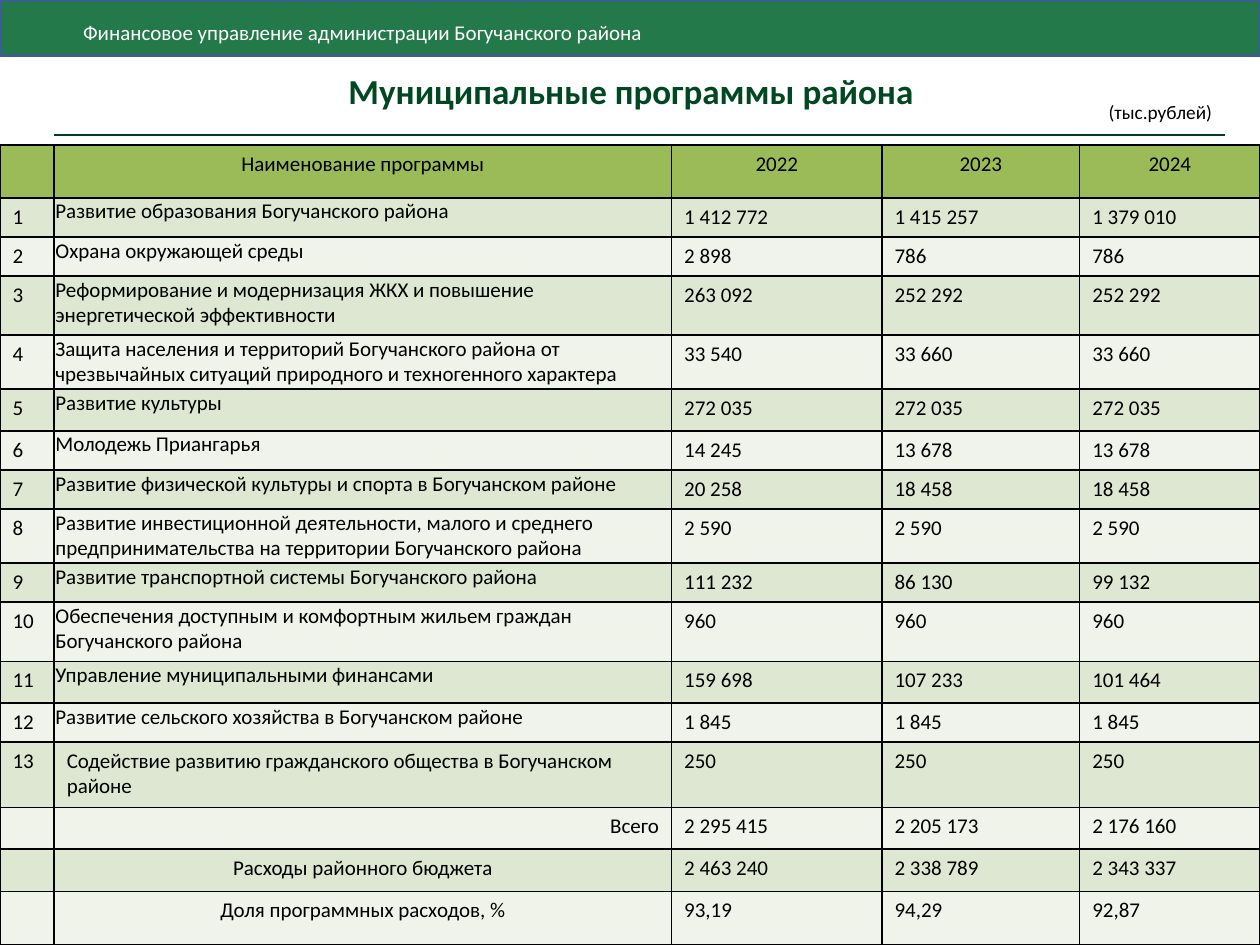
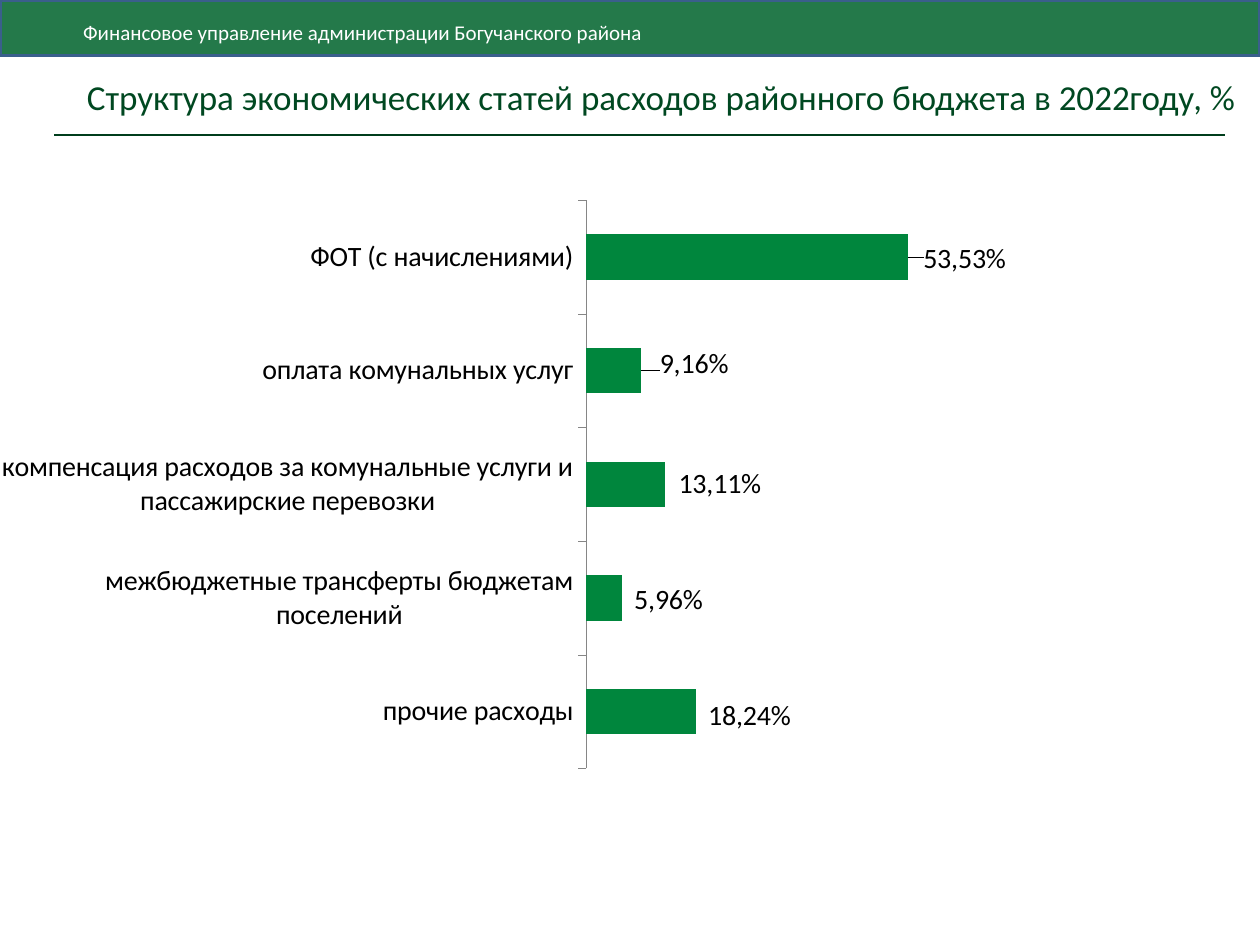
import lxml.etree
import pptx
import pptx.chart.data
import pptx.dml.color
import pptx.enum.chart
import pptx.enum.shapes
import pptx.enum.text
import pptx.oxml
import pptx.oxml.ns
import pptx.util

Inches = pptx.util.Inches
Pt = pptx.util.Pt
Align = pptx.enum.text.PP_ALIGN
Anchor = pptx.enum.text.MSO_ANCHOR
qn = pptx.oxml.ns.qn

FONT = "Calibri"
BLACK = "000000"
WHITE = "FFFFFF"
TITLE_GREEN = "004821"
BAND_GREEN = "00642D"
BAND_OUTLINE = "3A5F8C"
RULE_GREEN = "003E1C"
HEADER_FILL = "9BBB59"
ROW_FILLS = ["DEE7D1", "EFF3EA"]
BAR_GREEN = "00863D"
AXIS_GRAY = "868686"


def color(hex_value):
    return pptx.dml.color.RGBColor.from_string(hex_value)


def write(text_frame, text, size, hex_value=BLACK, align=Align.LEFT, bold=False):
    text_frame.text = text
    paragraph = text_frame.paragraphs[0]
    paragraph.alignment = align
    paragraph.font.size = Pt(size)
    for run in paragraph.runs:
        run.font.name = FONT
        run.font.size = Pt(size)
        run.font.bold = bold
        run.font.color.rgb = color(hex_value)


presentation = pptx.Presentation()
presentation.slide_width = Inches(10)
presentation.slide_height = Inches(7.5)

# Shared frame of both slides: band, rule and title
titles = [
    ("Муниципальные программы района", (0.51, 0.52, 9, 0.39), True),
    ("Структура экономических статей расходов районного бюджета в 2022году, %",
     (0.5, 0.3, 9.5, 0.93), False),
]
slides = []
for title, title_place, bold in titles:
    slide = presentation.slides.add_slide(presentation.slide_layouts[6])
    slides.append(slide)

    band = slide.shapes.add_shape(
        pptx.enum.shapes.MSO_SHAPE.RECTANGLE, 0, 0, Inches(10), Inches(0.44))
    band.shadow.inherit = False
    band.fill.solid()
    band.fill.fore_color.rgb = color(BAND_GREEN)
    fill_color = band.fill._xPr.find(qn("a:solidFill"))[0]
    lxml.etree.SubElement(fill_color, qn("a:alpha"), val="86000")
    band.line.color.rgb = color(BAND_OUTLINE)
    band.line.width = Pt(2)
    band.text_frame.margin_left = Inches(0.66)
    band.text_frame.margin_top = Inches(0.12)
    band.text_frame.vertical_anchor = Anchor.MIDDLE
    write(band.text_frame, "Финансовое управление администрации Богучанского района",
          12, WHITE)

    rule = slide.shapes.add_connector(
        pptx.enum.shapes.MSO_CONNECTOR.STRAIGHT,
        Inches(0.43), Inches(1.07), Inches(9.72), Inches(1.07))
    rule.line.color.rgb = color(RULE_GREEN)
    rule.line.width = Pt(1.25)
    lxml.etree.SubElement(rule._element.spPr, qn("a:effectLst"))

    title_box = slide.shapes.add_textbox(*map(Inches, title_place))
    title_box.text_frame.word_wrap = True
    title_box.text_frame.vertical_anchor = Anchor.MIDDLE
    write(title_box.text_frame, title, 20, TITLE_GREEN, Align.CENTER, bold)

programs_slide, structure_slide = slides

# Slide 1: table of programs, each row with its height
programs = [
    (0.42, "", "Наименование программы", "2022", "2023", "2024"),
    (0.31, "1", "Развитие образования Богучанского района",
     "1 412 772", "1 415 257", "1 379 010"),
    (0.31, "2", "Охрана окружающей среды", "2 898", "786", "786"),
    (0.47, "3", "Реформирование и модернизация ЖКХ и повышение энергетической эффективности",
     "263 092", "252 292", "252 292"),
    (0.43, "4", "Защита населения и территорий Богучанского района от чрезвычайных "
     "ситуаций природного и техногенного характера", "33 540", "33 660", "33 660"),
    (0.33, "5", "Развитие культуры", "272 035", "272 035", "272 035"),
    (0.31, "6", "Молодежь Приангарья", "14 245", "13 678", "13 678"),
    (0.31, "7", "Развитие физической культуры и спорта в Богучанском районе",
     "20 258", "18 458", "18 458"),
    (0.43, "8", "Развитие инвестиционной деятельности, малого и среднего "
     "предпринимательства на территории Богучанского района",
     "2 590", "2 590", "2 590"),
    (0.31, "9", "Развитие транспортной системы Богучанского района",
     "111 232", "86 130", "99 132"),
    (0.47, "10", "Обеспечения доступным и комфортным жильем граждан Богучанского района",
     "960", "960", "960"),
    (0.33, "11", "Управление муниципальными финансами",
     "159 698", "107 233", "101 464"),
    (0.31, "12", "Развитие сельского хозяйства в Богучанском районе",
     "1 845", "1 845", "1 845"),
    (0.52, "13", "Содействие развитию гражданского общества в Богучанском районе",
     "250", "250", "250"),
    (0.33, "", "Всего", "2 295 415", "2 205 173", "2 176 160"),
    (0.34, "", "Расходы районного бюджета", "2 463 240", "2 338 789", "2 343 337"),
    (0.42, "", "Доля программных расходов, %", "93,19", "94,29", "92,87"),
]
column_widths = [0.43, 4.9, 1.67, 1.57, 1.43]
name_alignments = {14: Align.RIGHT, 15: Align.CENTER, 16: Align.CENTER}

table = programs_slide.shapes.add_table(
    len(programs), len(column_widths), 0, Inches(1.15), Inches(10), Inches(6.35)).table
table.first_row = False
table.horz_banding = False
for column, width in zip(table.columns, column_widths):
    column.width = Inches(width)

for row_index, (height, *texts) in enumerate(programs):
    table.rows[row_index].height = Inches(height)
    for column_index, text in enumerate(texts):
        cell = table.cell(row_index, column_index)
        align = Align.LEFT
        if row_index == 0:
            align = Align.CENTER
        elif column_index == 1:
            align = name_alignments.get(row_index, Align.LEFT)
            if row_index <= 12:
                cell.margin_left = cell.margin_right = cell.margin_top = Inches(0.01)
                cell.margin_bottom = 0
        write(cell.text_frame, text, 12, align=align)

        cell_properties = cell._tc.get_or_add_tcPr()
        for side in ("lnL", "lnR", "lnT", "lnB"):
            border = lxml.etree.SubElement(
                cell_properties, qn("a:" + side), w=str(Pt(1)))
            border_fill = lxml.etree.SubElement(border, qn("a:solidFill"))
            lxml.etree.SubElement(border_fill, qn("a:srgbClr"), val=BLACK)
        cell.fill.solid()
        cell.fill.fore_color.rgb = color(
            ROW_FILLS[(row_index - 1) % 2] if row_index else HEADER_FILL)

# Unit of the table
unit_box = programs_slide.shapes.add_textbox(
    Inches(8.7), Inches(0.75), Inches(1.3), Inches(0.29))
unit_box.text_frame.word_wrap = True
write(unit_box.text_frame, "(тыс.рублей)", 11)

# Slide 2: bar chart of shares, each with the shift of its label in inches
CHART_WIDTH = 10
CHART_HEIGHT = 5.26
shares = [
    ("прочие расходы", 18.24, 0.06, 0.04),
    ("межбюджетные трансферты бюджетам поселений", 5.96, 0.06, 0.02),
    ("компенсация расходов за комунальные услуги и пассажирские перевозки",
     13.11, 0.07, 0),
    ("оплата комунальных услуг", 9.16, 0.11, -0.05),
    ("ФОТ (с начислениями)", 53.53, 0.08, 0.02),
]
chart_data = pptx.chart.data.CategoryChartData(number_format="0.00")
chart_data.categories = [share[0] for share in shares]
chart_data.add_series("Series 1", [share[1] for share in shares])
chart = structure_slide.shapes.add_chart(
    pptx.enum.chart.XL_CHART_TYPE.BAR_CLUSTERED, 0, Inches(1.47),
    Inches(CHART_WIDTH), Inches(CHART_HEIGHT), chart_data).chart
chart.has_legend = False
chart.has_title = False
chart.font.name = FONT
chart.font.size = Pt(18)
chart.font.color.rgb = color(BLACK)

category_axis = chart.category_axis
category_axis.major_tick_mark = pptx.enum.chart.XL_TICK_MARK.OUTSIDE
category_axis.tick_labels.font.size = Pt(16)
category_axis.format.line.color.rgb = color(AXIS_GRAY)
category_axis.format.line.width = Pt(0.25)
value_axis = chart.value_axis
value_axis.minimum_scale = 0
value_axis.maximum_scale = 100
value_axis.has_major_gridlines = False
value_axis.tick_labels.number_format = "0.00"
value_axis.tick_labels.number_format_is_linked = False
value_axis.visible = False

plot = chart.plots[0]
plot.vary_by_categories = False
plot.gap_width = 150
series = plot.series[0]
series.format.fill.solid()
series.format.fill.fore_color.rgb = color(BAR_GREEN)
series.data_labels.show_value = True
series.data_labels.number_format = "0.00"
series.data_labels.number_format_is_linked = False
series.data_labels.font.size = Pt(16)

# Data labels, and the manual layouts of labels and plot
layouts = []
for index, (category, share, right, down) in enumerate(shares):
    label = series.points[index].data_label
    write(label.text_frame, f"{share:.2f}%".replace(".", ","), 16)
    label.position = pptx.enum.chart.XL_LABEL_POSITION.OUTSIDE_END
    label_element = series.data_labels._element.findall(qn("c:dLbl"))[index]
    layouts.append((label_element, 1, {
        "x": right / CHART_WIDTH, "y": down / CHART_HEIGHT}))
layouts.append((chart._chartSpace.chart.plotArea, 0, {
    "layoutTarget": "inner", "xMode": "edge", "yMode": "edge",
    "x": 4.65 / CHART_WIDTH, "y": 0.12 / CHART_HEIGHT,
    "w": 4.78 / CHART_WIDTH, "h": 4.51 / CHART_HEIGHT}))
for parent, place, settings in layouts:
    for old_layout in parent.findall(qn("c:layout")):
        parent.remove(old_layout)
    layout = lxml.etree.Element(qn("c:layout"))
    manual_layout = lxml.etree.SubElement(layout, qn("c:manualLayout"))
    for tag, value in settings.items():
        lxml.etree.SubElement(manual_layout, qn("c:" + tag), val=str(value))
    parent.insert(place, layout)

presentation.save("out.pptx")
